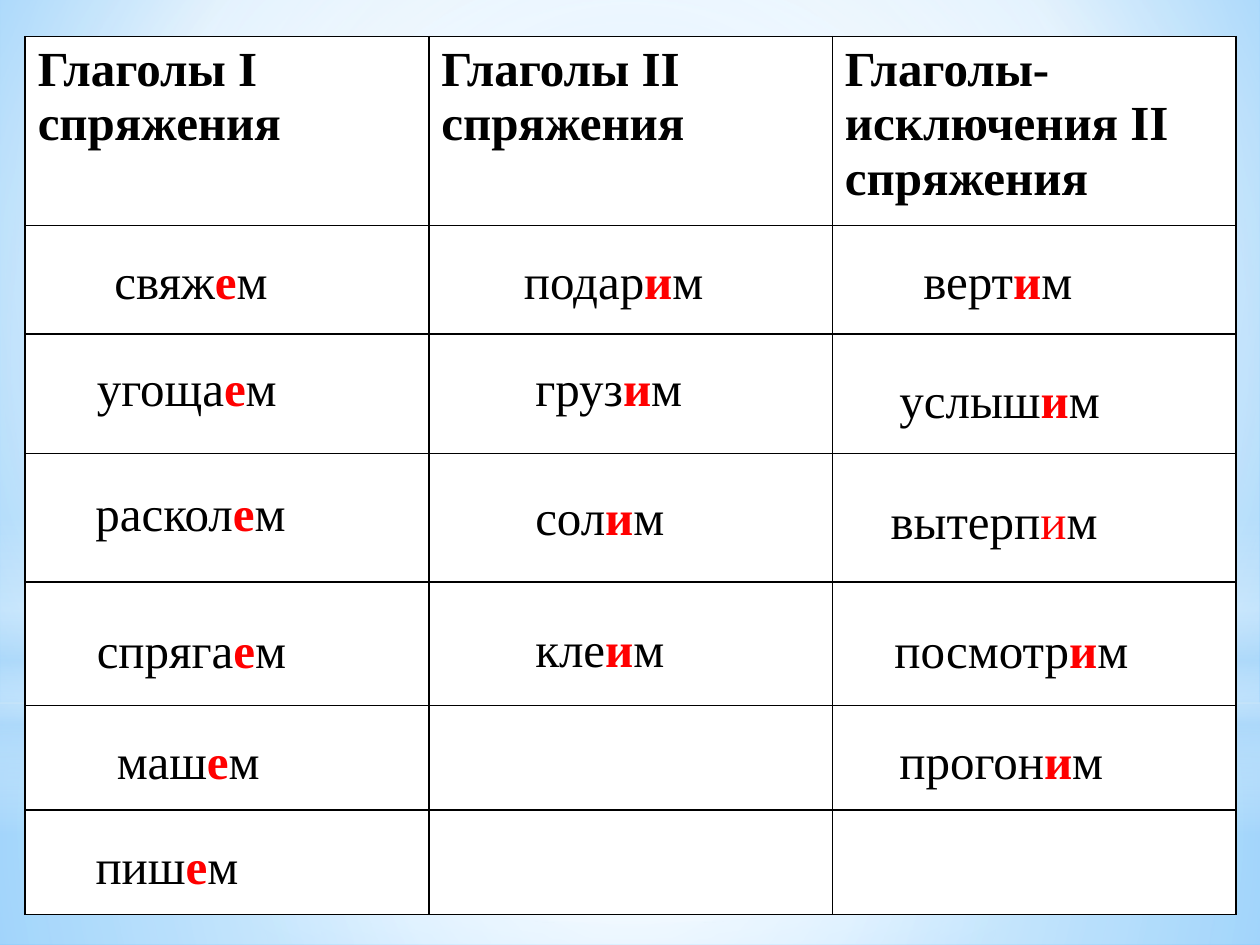
from lxml import etree
from pptx import Presentation
from pptx.dml.color import RGBColor
from pptx.enum.shapes import MSO_SHAPE
from pptx.enum.text import MSO_AUTO_SIZE
from pptx.oxml.ns import qn
from pptx.util import Inches, Pt

RECTANGLE, OVAL = MSO_SHAPE.RECTANGLE, MSO_SHAPE.OVAL
FIT_SHAPE = MSO_AUTO_SIZE.SHAPE_TO_FIT_TEXT

COLORS = {
    "text": "000000", "ending": "FF0000", "white": "FFFFFF", "haze": "B4DCFA",
    "sky": "9ED5FF", "deep": "5BB9FF",
}
BASE = {"name": "Times New Roman", "size": Pt(28)}
CENTER = (50, 50, 50, 50)
HEADINGS = ["Глаголы I спряжения", "Глаголы II спряжения",
            "Глаголы-исключения II спряжения"]
ROW_HEIGHTS = [1.5, 0.86, 0.95, 1.02, 0.98, 0.83, 0.83]
VERBS = [
    ("свяж", "е", 0.81, 1.94, 1.57), ("угоща", "е", 0.67, 2.79, 1.65),
    ("раскол", "е", 0.66, 3.78, 1.97), ("спряга", "е", 0.67, 4.87, 1.73),
    ("маш", "е", 0.83, 5.75, 1.34), ("пиш", "е", 0.66, 6.58, 1.65),
    ("подар", "и", 4.06, 1.94, 1.65), ("груз", "и", 4.15, 2.79, 1.42),
    ("сол", "и", 4.15, 3.81, 1.42), ("кле", "и", 4.15, 4.86, 1.34),
    ("верт", "и", 7.23, 1.94, 1.42), ("услыш", "и", 7.04, 2.88, 1.89),
    ("вытерп", "и", 6.97, 3.84, 1.89), ("посмотр", "и", 7, 4.87, 2.13),
    ("прогон", "и", 7.04, 5.75, 2.05),
]
LIGHT_VERB = "вытерп"
GLOWS = [
    (RECTANGLE, (0, 5.58, 10, 1.92), CENTER,
     [(0, "white", 91), (37, "white", 76), (100, "haze", 79)]),
    (RECTANGLE, (0, 0, 10, 5.58), CENTER,
     [(0, "white", 89), (48, "white", 62), (100, "haze", 79)]),
    (RECTANGLE, (0, 4.12, 10, 2.5), None,
     [(0, "white", 0), (29, "white", 30), (45, "haze", 40),
      (55, "white", 26), (65, "haze", 60), (100, "white", 0)]),
    (OVAL, (0, 1.75, 10, 5.58), CENTER, [(0, "white", 100), (56, "white", 0)]),
]


def color(name):
    return RGBColor.from_string(COLORS[name])


def add_element(parent, tag, **attributes):
    element = etree.SubElement(parent, qn(tag))
    for key, value in attributes.items():
        element.set(key, str(value))
    return element


def set_gradient(fill, owner, stops, focus):
    fill.solid()
    solid = owner.find(".//" + qn("a:solidFill"))
    gradient = etree.Element(qn("a:gradFill"), rotWithShape="1")
    stop_list = add_element(gradient, "a:gsLst")
    for position, name, opacity in stops:
        stop = add_element(stop_list, "a:gs", pos=position * 1000)
        shade = add_element(stop, "a:srgbClr", val=COLORS[name])
        if opacity < 100:
            add_element(shade, "a:alpha", val=opacity * 1000)
    if focus is None:
        add_element(gradient, "a:lin", ang=90 * 60000, scaled=0)
    else:
        circle = add_element(gradient, "a:path", path="circle")
        sides = {side: value * 1000 for side, value in zip("ltrb", focus)}
        add_element(circle, "a:fillToRect", **sides)
    solid.getparent().replace(solid, gradient)


def draw_background(page):
    stops = [(0, "sky", 100), (60, "white", 100), (100, "deep", 100)]
    set_gradient(page.background.fill, page.element, stops, (20, 10, 20, 60))
    for kind, place, focus, stops in GLOWS:
        glow = page.shapes.add_shape(kind, *map(Inches, place))
        glow.shadow.inherit = False
        glow.line.fill.background()
        set_gradient(glow.fill, glow.element, stops, focus)


def add_span(para, text, **extra):
    span = para.add_run()
    span.text = text
    values = BASE | {"bold": False} | extra
    span.font.color.rgb = color(values.pop("color", "text"))
    for key, value in values.items():
        setattr(span.font, key, value)


def style_cell(cell):
    properties = cell._tc.get_or_add_tcPr()
    for side in ("a:lnL", "a:lnR", "a:lnT", "a:lnB"):
        border = add_element(properties, side, w=Pt(1))
        paint = add_element(border, "a:solidFill")
        add_element(paint, "a:srgbClr", val=COLORS["text"])
    cell.fill.solid()
    cell.fill.fore_color.rgb = color("white")


def draw_table(page, left, top, width, height):
    table = page.shapes.add_table(
        len(ROW_HEIGHTS), len(HEADINGS), Inches(left), Inches(top),
        Inches(width), Inches(height)).table
    for column in table.columns:
        column.width = Inches(width / len(HEADINGS))
    for row, row_height in zip(table.rows, ROW_HEIGHTS):
        row.height = Inches(row_height)
    for cell in table.iter_cells():
        style_cell(cell)
    for cell, heading in zip(table.rows[0].cells, HEADINGS):
        add_span(cell.text_frame.paragraphs[0], heading, bold=True)


def draw_verb(page, stem, vowel, left, top, width):
    box = page.shapes.add_textbox(
        Inches(left), Inches(top), Inches(width), Inches(0.57))
    box.text_frame.word_wrap = True
    box.text_frame.auto_size = FIT_SHAPE
    para = box.text_frame.paragraphs[0]
    add_span(para, stem)
    add_span(para, vowel, color="ending", bold=stem != LIGHT_VERB)
    add_span(para, "м")


def main():
    deck = Presentation()
    deck.slide_width, deck.slide_height = Inches(10), Inches(7.5)
    page = deck.slides.add_slide(deck.slide_layouts[6])
    draw_background(page)
    draw_table(page, 0.2, 0.29, 9.61, sum(ROW_HEIGHTS))
    for verb in VERBS:
        draw_verb(page, *verb)
    deck.save("out.pptx")


if __name__ == "__main__":
    main()
